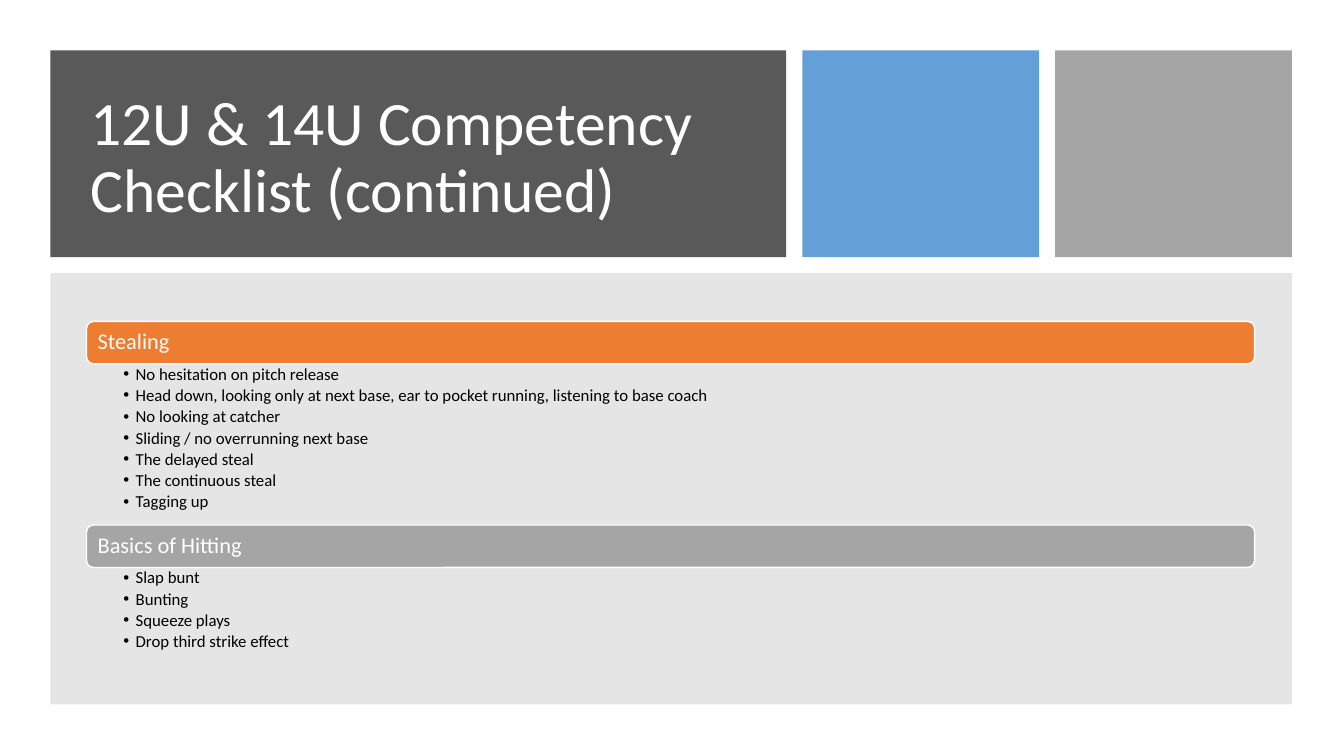
"""Build the 12U and 14U competency checklist slide."""
import lxml.etree
import pptx
import pptx.dml.color
import pptx.enum.shapes
import pptx.enum.text
import pptx.oxml.ns
import pptx.util

Cm, Pt = pptx.util.Cm, pptx.util.Pt
SHAPES = pptx.enum.shapes.MSO_SHAPE
ANCHOR = pptx.enum.text.MSO_ANCHOR
qn = pptx.oxml.ns.qn

TITLE = "12U & 14U Competency Checklist (continued)"
SECTIONS = [
    ("Stealing", "ED7D31", [
        "No hesitation on pitch release",
        "Head down, looking only at next base, ear to pocket running, listening to base coach",
        "No looking at catcher",
        "Sliding / no overrunning next base",
        "The delayed steal",
        "The continuous steal",
        "Tagging up",
    ]),
    ("Basics of Hitting", "A5A5A5", [
        "Slap bunt",
        "Bunting",
        "Squeeze plays",
        "Drop third strike effect",
    ]),
]
PANELS = [
    ((1.27, 1.27, 18.54, 5.21), "595959", 100),
    ((20.22, 1.27, 5.97, 5.21), "5B9BD5", 95),
    ((26.59, 1.27, 5.97, 5.21), "A5A5A5", 100),
    ((1.27, 6.88, 31.29, 10.87), "808080", 20),
]
TITLE_AREA = (2.03, 2.03, 16.92, 3.96)
LIST_LEFT, LIST_TOP, LIST_WIDTH = 2.18, 8.1, 29.44
HEADER_HEIGHT, ITEM_HEIGHT = 1.07, 0.58
TITLE_FRAME = {"word_wrap": True, "vertical_anchor": ANCHOR.MIDDLE,
               "auto_size": pptx.enum.text.MSO_AUTO_SIZE.NONE}
HEADER_FRAME = {"word_wrap": True, "vertical_anchor": ANCHOR.MIDDLE,
                "margin_left": Cm(0.23), "margin_right": Cm(0.23),
                "margin_top": Cm(0.18), "margin_bottom": Cm(0.18)}
ITEM_FRAME = {"word_wrap": True, "vertical_anchor": ANCHOR.TOP,
              "margin_left": Cm(0.93), "margin_right": Cm(0.3),
              "margin_top": Cm(0.05), "margin_bottom": Cm(0.05)}


def color(value):
    return pptx.dml.color.RGBColor.from_string(value)


def apply(target, values):
    for name, value in values.items():
        setattr(target, name, value)


def add_block(slide, kind, area, fill, opacity=100, outline=None):
    block = slide.shapes.add_shape(kind, *map(Cm, area))
    block.shadow.inherit = False
    block.fill.solid()
    block.fill.fore_color.rgb = color(fill)
    if opacity < 100:
        tint = block.fill._xPr.find(".//" + qn("a:srgbClr"))
        lxml.etree.SubElement(tint, qn("a:alpha"), val=str(opacity * 1000))
    if outline:
        block.line.color.rgb = color(outline)
        block.line.width = Pt(1)
    else:
        block.line.fill.background()
    return block


def write(frame, lines, frame_format, size, text_color, space=0, bullet=False):
    apply(frame, frame_format)
    for index, line in enumerate(lines):
        para = frame.add_paragraph() if index else frame.paragraphs[0]
        apply(para, {"alignment": pptx.enum.text.PP_ALIGN.LEFT, "line_spacing": 0.9,
                     "space_before": Pt(0), "space_after": Pt(space)})
        span = para.add_run()
        span.text = line
        apply(span.font, {"name": "Calibri", "size": Pt(size)})
        span.font.color.rgb = color(text_color)
        if bullet:
            properties = para._p.get_or_add_pPr()
            properties.set("marL", str(Cm(0.31)))
            properties.set("indent", str(-Cm(0.31)))
            lxml.etree.SubElement(properties, qn("a:buFont"), typeface="Arial")
            lxml.etree.SubElement(properties, qn("a:buChar"), char="•")


def main():
    deck = pptx.Presentation()
    apply(deck, {"slide_width": Cm(33.87), "slide_height": Cm(19.05)})
    slide = deck.slides.add_slide(deck.slide_layouts.get_by_name("Title Only"))

    for area, fill, opacity in PANELS:
        add_block(slide, SHAPES.RECTANGLE, area, fill, opacity)

    title = slide.shapes.title
    apply(title, dict(zip(("left", "top", "width", "height"), map(Cm, TITLE_AREA))))
    write(title.text_frame, [TITLE], TITLE_FRAME, 44, "FFFFFF")
    slide.shapes._spTree.append(title._element)

    top = LIST_TOP
    for heading, fill, items in SECTIONS:
        header = add_block(slide, SHAPES.ROUNDED_RECTANGLE,
                           (LIST_LEFT, top, LIST_WIDTH, HEADER_HEIGHT), fill, outline="FFFFFF")
        write(header.text_frame, [heading], HEADER_FRAME, 16, "FFFFFF")
        top += HEADER_HEIGHT
        height = ITEM_HEIGHT * len(items)
        box = slide.shapes.add_textbox(*map(Cm, (LIST_LEFT, top, LIST_WIDTH, height)))
        write(box.text_frame, items, ITEM_FRAME, 12, "000000", space=2.2, bullet=True)
        top += height

    deck.save("out.pptx")


if __name__ == "__main__":
    main()
